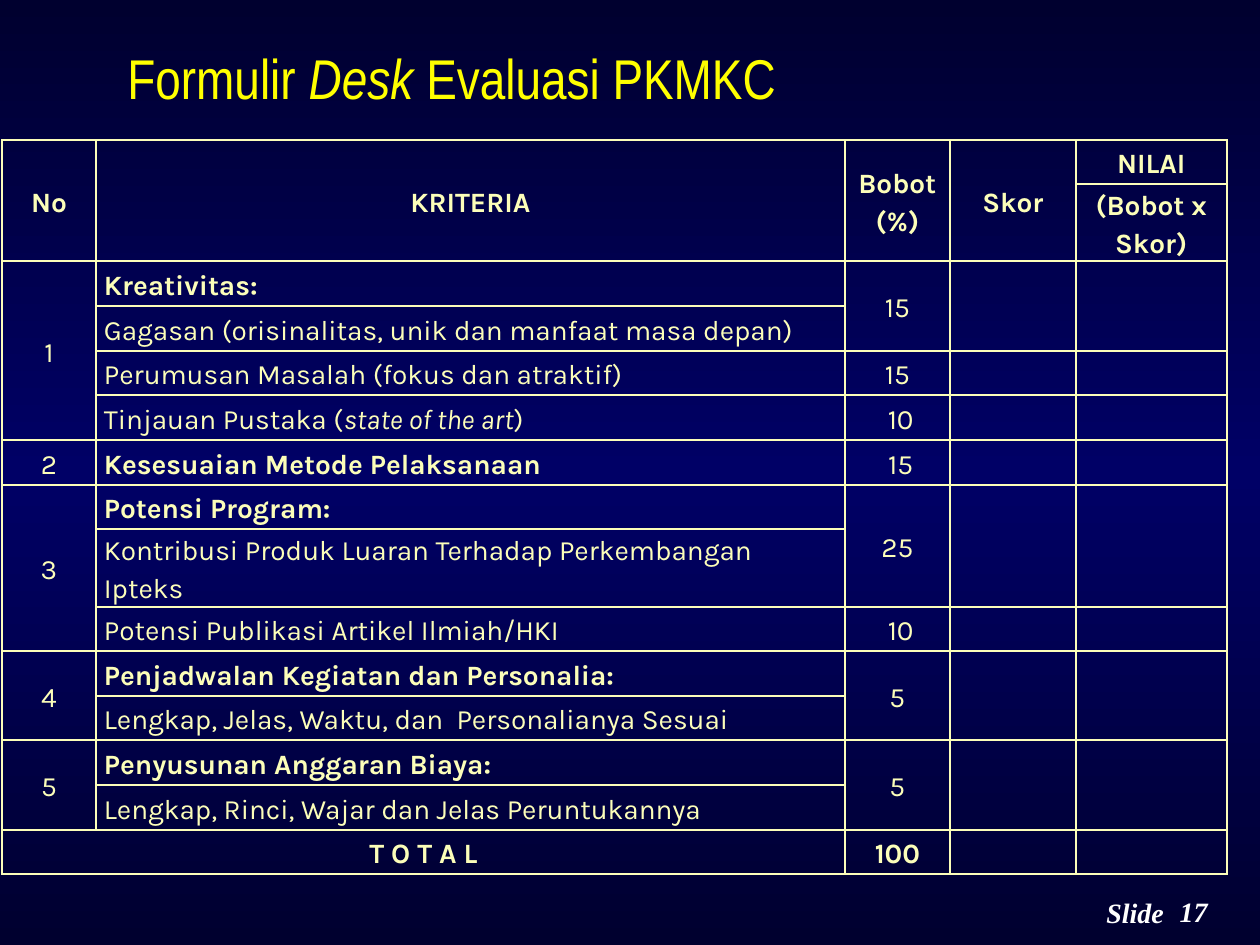
import copy
import itertools

import pptx
import pptx.dml.color
import pptx.enum.text
import pptx.oxml
import pptx.oxml.ns
import pptx.util

RGBColor = pptx.dml.color.RGBColor
ALIGN = pptx.enum.text.PP_ALIGN
ANCHOR = pptx.enum.text.MSO_ANCHOR

NAVY = RGBColor(0x00, 0x00, 0x2F)
BLUE = RGBColor(0x00, 0x00, 0x66)
CREAM = RGBColor(0xFC, 0xFE, 0xB9)
YELLOW = RGBColor(0xFF, 0xFF, 0x00)
WHITE = RGBColor(0xFF, 0xFF, 0xFF)

SCALE = 914400 // 126
COLUMN_WIDTHS = [94, 749, 105, 126, 151]
ROW_EDGES = [140, 184, 261, 306, 351, 395, 440, 485, 529, 607, 651, 696, 740, 785, 830, 874]
HEADER = [
    ("No", "KRITERIA", "Bobot (%)", "Skor", "NILAI"),
    (None, None, None, None, "(Bobot x Skor)"),
]
CRITERIA = [
    ("1", "Kreativitas:", "15"),
    (None, "Gagasan (orisinalitas, unik dan manfaat masa depan)", None),
    (None, "Perumusan Masalah (fokus dan atraktif)", "15"),
    (None, "Tinjauan Pustaka (*state of the art*)", " 10"),
    ("2", "Kesesuaian Metode Pelaksanaan", " 15"),
    ("3", "Potensi Program:", "25"),
    (None, "Kontribusi Produk Luaran Terhadap Perkembangan Ipteks", None),
    (None, "Potensi Publikasi Artikel Ilmiah/HKI", " 10"),
    ("4", "Penjadwalan Kegiatan dan Personalia:", "5"),
    (None, "Lengkap, Jelas, Waktu, dan  Personalianya Sesuai", None),
    ("5", "Penyusunan Anggaran Biaya:", "5"),
    (None, "Lengkap, Rinci, Wajar dan Jelas Peruntukannya", None),
]
TOTAL = ("T O T A L", "", "100", "", "")


def px(length):
    """Turn whole pixels into EMU."""
    return pptx.util.Emu(length * SCALE)


def write_spans(para, text, font, size, color, bold=False, italic=False):
    """Write text into a paragraph, switching italics at each asterisk."""
    for index, part in enumerate(text.split("*")):
        if part:
            span = para.add_run()
            span.text = part
            span.font.name = font
            span.font.size = pptx.util.Pt(size)
            span.font.color.rgb = color
            span.font.bold = bold
            span.font.italic = italic != (index % 2 == 1)


def add_text(page, bounds, text, font, size, color, strong=False,
             align=ALIGN.LEFT, anchor=ANCHOR.TOP):
    """Add a one-paragraph text box, bold italic when strong."""
    box = page.shapes.add_textbox(*map(px, bounds))
    frame = box.text_frame
    frame.word_wrap = True
    frame.vertical_anchor = anchor
    frame.paragraphs[0].alignment = align
    write_spans(frame.paragraphs[0], text, font, size, color, strong, strong)


def paint_background(page):
    """Fill the page with a vertical navy, blue, navy gradient."""
    fill = page.background.fill
    fill.gradient()
    fill.gradient_angle = 90
    stops = next(page.element.iter(pptx.oxml.ns.qn("a:gsLst")))
    stops.insert(1, copy.deepcopy(stops[0]))
    for stop, position, color in zip(fill.gradient_stops, (0, 0.5, 1), (NAVY, BLUE, NAVY)):
        stop.position = position
        stop.color.rgb = color


def style_cell(cell):
    """Give a cell thin cream borders, no fill and tight margins."""
    properties = cell._tc.get_or_add_tcPr()
    for side in "LRTB":
        properties.append(pptx.oxml.parse_xml(
            f'<a:ln{side} {pptx.oxml.ns.nsdecls("a")} w="12700"><a:solidFill>'
            f'<a:srgbClr val="{CREAM}"/></a:solidFill></a:ln{side}>'))
    cell.fill.background()
    cell.vertical_anchor = ANCHOR.MIDDLE
    cell.margin_left = cell.margin_right = px(8)
    cell.margin_top = cell.margin_bottom = 0


def table_rows():
    """Return all rows, with None where a cell continues the one above."""
    body = [row + (None if row[2] is None else "",) * 2 for row in CRITERIA]
    return HEADER + body + [TOTAL]


def merge_cells(table, rows):
    """Merge each cell with the None cells below it, and the total label."""
    for column, values in enumerate(zip(*rows)):
        starts = [index for index, value in enumerate(values) if value is not None]
        for start, following in itertools.pairwise(starts + [len(rows)]):
            if following - start > 1:
                table.cell(start, column).merge(table.cell(following - 1, column))
    last = len(rows) - 1
    table.cell(last, 0).merge(table.cell(last, 1))


def add_evaluation_table(page):
    """Add the table of criteria, weights and scores."""
    rows = table_rows()
    bounds = (2, ROW_EDGES[0], sum(COLUMN_WIDTHS), ROW_EDGES[-1] - ROW_EDGES[0])
    table = page.shapes.add_table(len(rows), len(COLUMN_WIDTHS), *map(px, bounds)).table
    table.first_row = table.horz_banding = False
    for column, width in zip(table.columns, COLUMN_WIDTHS):
        column.width = px(width)
    for row, (top, bottom) in zip(table.rows, itertools.pairwise(ROW_EDGES)):
        row.height = px(bottom - top)
    for index, values in enumerate(rows):
        in_body = len(HEADER) <= index < len(rows) - 1
        for column, text in enumerate(values):
            cell = table.cell(index, column)
            style_cell(cell)
            para = cell.text_frame.paragraphs[0]
            para.line_spacing = 1.15
            is_criterion = in_body and column == 1
            para.alignment = ALIGN.LEFT if is_criterion else ALIGN.CENTER
            bold = not in_body or (is_criterion and values[0] is not None)
            write_spans(para, text or "", "Karla", 16, CREAM, bold)
    merge_cells(table, rows)


def main():
    """Build the evaluation form slide and save it."""
    deck = pptx.Presentation()
    deck.slide_width, deck.slide_height = px(1260), px(945)
    page = deck.slides.add_slide(deck.slide_layouts[6])
    paint_background(page)
    add_text(page, (1148, 888, 72, 45), "17", "Times New Roman", 16, WHITE,
             strong=True, align=ALIGN.RIGHT)
    add_text(page, (1094, 856, 115, 79), "Slide", "Times New Roman", 16, WHITE,
             strong=True, anchor=ANCHOR.BOTTOM)
    add_evaluation_table(page)
    add_text(page, (115, 37, 1002, 81), "Formulir *Desk *Evaluasi PKMKC",
             "Arial Narrow", 32, YELLOW)
    deck.save("out.pptx")


if __name__ == "__main__":
    main()
